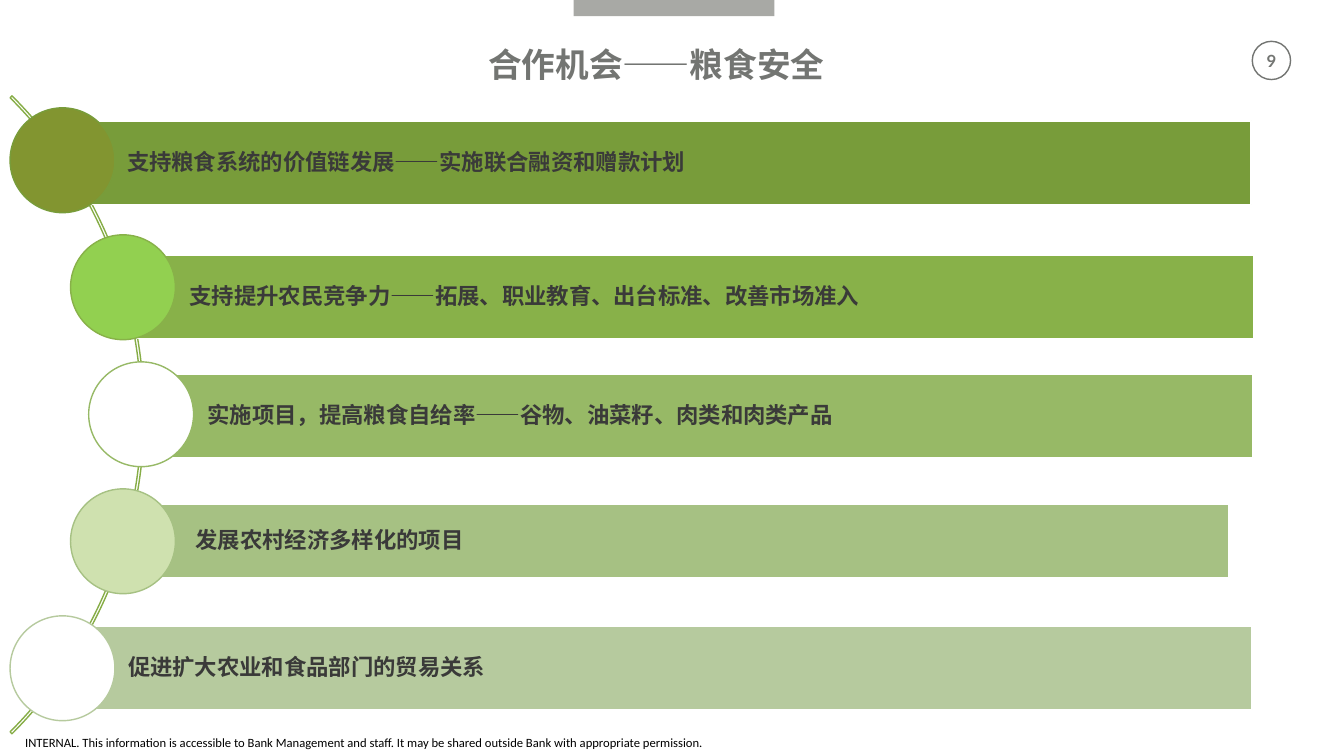
"""Build the slide on cooperation in food security."""
from lxml.etree import SubElement
from pptx import Presentation
from pptx.dml.color import RGBColor
from pptx.enum.shapes import MSO_SHAPE
from pptx.enum.text import MSO_ANCHOR, PP_ALIGN
from pptx.oxml.ns import qn
from pptx.util import Inches, Pt

HAN = "Noto Sans CJK SC"


def write(shape, text, size=16, font=HAN, color="3A3A39", bold=True,
          align=PP_ALIGN.LEFT, left=0, wrap=True):
    frame = shape.text_frame
    frame.word_wrap = wrap
    frame.vertical_anchor = MSO_ANCHOR.MIDDLE
    frame.margin_left = Inches(left)
    frame.margin_right = frame.margin_top = frame.margin_bottom = 0
    para = frame.paragraphs[0]
    para.alignment = align
    para.line_spacing = 0.9 if left else 1
    run = para.add_run()
    run.text = text
    run.font.name = font
    run.font.size = Pt(size)
    run.font.bold = bold
    run.font.color.rgb = RGBColor.from_string(color)
    SubElement(run._r.get_or_add_rPr(), qn("a:ea")).set("typeface", font)


def draw(kind, x, y, w, h, fill=None, line=None):
    shape = slide.shapes.add_shape(
        kind, Inches(x), Inches(y), Inches(w), Inches(h))
    shape.shadow.inherit = False
    if fill:
        shape.fill.solid()
        shape.fill.fore_color.rgb = RGBColor.from_string(fill)
    else:
        shape.fill.background()
    if line:
        shape.line.color.rgb = RGBColor.from_string(line)
        shape.line.width = Pt(1)
    else:
        shape.line.fill.background()
    return shape


deck = Presentation()
deck.slide_width = Inches(13.33)
deck.slide_height = Inches(7.5)
slide = deck.slides.add_slide(deck.slide_layouts[5])

title = slide.shapes.title
title.left, title.top = Inches(0.94), Inches(0.39)
title.width, title.height = Inches(11.14), Inches(0.5)
write(title, "合作机会——粮食安全", size=24, color="737572",
      align=PP_ALIGN.CENTER)

draw(MSO_SHAPE.RECTANGLE, 5.69, 0, 1.99, 0.16, "A8A9A5")
badge = draw(MSO_SHAPE.OVAL, 12.42, 0.41, 0.38, 0.38, line="737572")
write(badge, "9", size=12, font="Lato", color="737572",
      align=PP_ALIGN.CENTER, wrap=False)

note = slide.shapes.add_textbox(
    Inches(0.25), Inches(7.23), Inches(6.9), Inches(0.27))
write(note, "INTERNAL. This information is accessible to Bank Management and "
      "staff. It may be shared outside Bank with appropriate permission.",
      size=9, font="Calibri", color="000000", bold=False)

arc = draw(MSO_SHAPE.BLOCK_ARC, -7.52, -0.36, 8.95, 8.95, line="86AD46")
for i, value in enumerate((189, 27, 0.003)):
    arc.adjustments[i] = value

rows = [
    ("支持粮食系统的价值链发展——实施联合融资和赠款计划",
     0.6, 1.2, 11.81, 0.83, "789C3A", 0.1, "829530"),
    ("支持提升农民竞争力——拓展、职业教育、出台标准、改善市场准入",
     1.22, 2.53, 11.21, 0.83, "88B149", 0.7, "92D050"),
    ("实施项目，提高粮食自给率——谷物、油菜籽、肉类和肉类产品",
     1.4, 3.71, 11.03, 0.83, "97B966", 0.88, "FFFFFF"),
    ("发展农村经济多样化的项目",
     1.28, 5, 10.91, 0.73, "A6C183", 0.7, "CFE1AF"),
    ("促进扩大农业和食品部门的贸易关系",
     0.61, 6.21, 11.81, 0.83, "B6CA9E", 0.1, "FFFFFF"),
]
for i, (text, x, y, w, h, tone, dot, fill) in enumerate(rows):
    bar = draw(MSO_SHAPE.RECTANGLE, x, y, w, h, tone, "FFFFFF")
    write(bar, text, left=0.66)
    draw(MSO_SHAPE.OVAL, dot, 1.07 + 1.26 * i, 1.04, 1.04, fill, tone)

deck.save("out.pptx")
